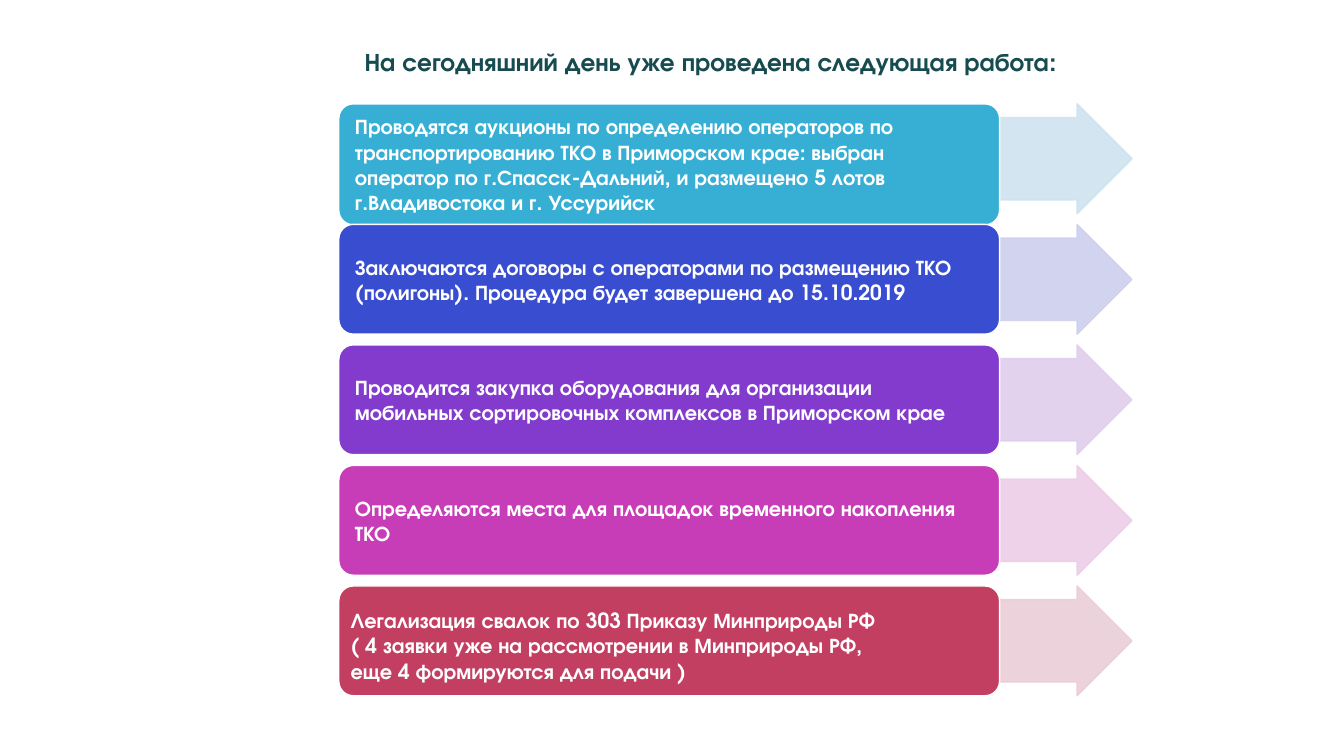
import lxml.etree
import pptx
import pptx.dml.color
import pptx.enum.shapes
import pptx.enum.text
import pptx.oxml.ns
import pptx.util

Pt = pptx.util.Pt
RGBColor = pptx.dml.color.RGBColor
ShapeType = pptx.enum.shapes.MSO_SHAPE
Anchor = pptx.enum.text.MSO_ANCHOR
Align = pptx.enum.text.PP_ALIGN

WHITE = RGBColor(0xFF, 0xFF, 0xFF)
DARK_TEAL = RGBColor(0x16, 0x4B, 0x4F)
CYAN = RGBColor(0x37, 0xAF, 0xD5)
PALE_CYAN = RGBColor(0xCE, 0xE3, 0xEF)
BLUE = RGBColor(0x39, 0x4D, 0xD0)
PALE_BLUE = RGBColor(0xCE, 0xD0, 0xEE)
VIOLET = RGBColor(0x82, 0x3B, 0xCC)
PALE_VIOLET = RGBColor(0xDF, 0xCE, 0xED)
MAGENTA = RGBColor(0xC7, 0x3D, 0xB7)
PALE_MAGENTA = RGBColor(0xEC, 0xCE, 0xE7)
CRIMSON = RGBColor(0xC2, 0x3F, 0x61)
PALE_CRIMSON = RGBColor(0xEA, 0xCE, 0xD6)

TITLE = "На сегодняшний день уже проведена следующая работа:"
TITLE_FONT = {"name": "TeX Gyre Adventor", "size": Pt(18), "bold": True}
STEP_FONT = {"name": "TeX Gyre Adventor", "size": Pt(15), "bold": True}
STEP_FRAME = {
    "word_wrap": True,
    "vertical_anchor": Anchor.MIDDLE,
    "margin_left": Pt(8.5),
    "margin_right": Pt(8.5),
    "margin_top": Pt(5.8),
    "margin_bottom": Pt(5.8),
}

STEP_LEFT, STEP_WIDTH, STEP_RADIUS = 242, 472, 10.4
FIRST_TOP, ROW_PITCH = 74.2, 86.1
ARROW_RIGHT, ARROW_HEIGHT = 808.6, 78.4

STEPS = [
    ("Проводятся аукционы по определению операторов по транспортированию ТКО "
     "в Приморском крае: выбран оператор по г.Спасск-Дальний, и размещено "
     "5 лотов г.Владивостока и г. Уссурийск", CYAN, PALE_CYAN, 86.4, 713.5),
    ("Заключаются договоры с операторами по размещению ТКО (полигоны). "
     "Процедура будет завершена до 15.10.2019", BLUE, PALE_BLUE, 78.4, 691.2),
    ("Проводится закупка оборудования для организации мобильных сортировочных "
     "комплексов в Приморском крае", VIOLET, PALE_VIOLET, 78.4, 654.5),
    ("Определяются места для площадок временного накопления ТКО",
     MAGENTA, PALE_MAGENTA, 78.4, 654.5),
    ("", CRIMSON, PALE_CRIMSON, 78.4, 654.5),
]
LEGALIZATION_LINES = [
    "Легализация свалок по 303 Приказу Минприроды РФ",
    "( 4 заявки уже на рассмотрении в Минприроды РФ,",
    "еще 4 формируются для подачи )",
]


def apply_format(target, values):
    for name, value in values.items():
        setattr(target, name, value)


def write_lines(text_frame, lines, font, color, align=Align.LEFT):
    text_frame.text = "\n".join(lines)
    for paragraph in text_frame.paragraphs:
        paragraph.alignment = align
        apply_format(paragraph.font, font)
        paragraph.font.color.rgb = color


def add_title(slide):
    title = slide.shapes.title
    apply_format(title, {"left": Pt(183.6), "top": Pt(9.4),
                         "width": Pt(648), "height": Pt(49)})
    apply_format(title.text_frame, {"word_wrap": True,
                                    "vertical_anchor": Anchor.BOTTOM})
    write_lines(title.text_frame, [TITLE], TITLE_FONT, DARK_TEAL, Align.CENTER)
    title.text_frame.paragraphs[0].line_spacing = 0.9


def add_filled_shape(slide, kind, left, top, width, height, fill, line):
    shape = slide.shapes.add_shape(kind, Pt(left), Pt(top), Pt(width), Pt(height))
    shape.shadow.inherit = False
    shape.fill.solid()
    shape.fill.fore_color.rgb = fill
    shape.line.color.rgb = line
    shape.line.width = Pt(1)
    return shape


def add_arrow(slide, left, top, color):
    arrow = add_filled_shape(slide, ShapeType.RIGHT_ARROW, left, top,
                             ARROW_RIGHT - left, ARROW_HEIGHT, color, color)
    arrow.adjustments[0] = 0.75
    arrow.adjustments[1] = 0.5
    for color_element in arrow.element.spPr.iter(pptx.oxml.ns.qn("a:srgbClr")):
        lxml.etree.SubElement(color_element, pptx.oxml.ns.qn("a:alpha"), val="90000")


def add_step(slide, top, height, text, color):
    step = add_filled_shape(slide, ShapeType.ROUNDED_RECTANGLE, STEP_LEFT, top,
                            STEP_WIDTH, height, color, WHITE)
    step.adjustments[0] = STEP_RADIUS / height
    if text:
        apply_format(step.text_frame, STEP_FRAME)
        write_lines(step.text_frame, [text], STEP_FONT, WHITE)


def add_legalization_text(slide):
    box = slide.shapes.add_textbox(Pt(243.4), Pt(430.6), Pt(453.6), Pt(61.9))
    box.text_frame.word_wrap = True
    write_lines(box.text_frame, LEGALIZATION_LINES, STEP_FONT, WHITE)


def main():
    presentation = pptx.Presentation()
    presentation.slide_width = Pt(960)
    presentation.slide_height = Pt(540)
    slide = presentation.slides.add_slide(presentation.slide_layouts[5])
    add_title(slide)
    for row, (text, color, pale_color, height, arrow_left) in enumerate(STEPS):
        top = FIRST_TOP + row * ROW_PITCH
        add_arrow(slide, arrow_left, top, pale_color)
        add_step(slide, top, height, text, color)
    add_legalization_text(slide)
    presentation.save("out.pptx")


if __name__ == "__main__":
    main()
